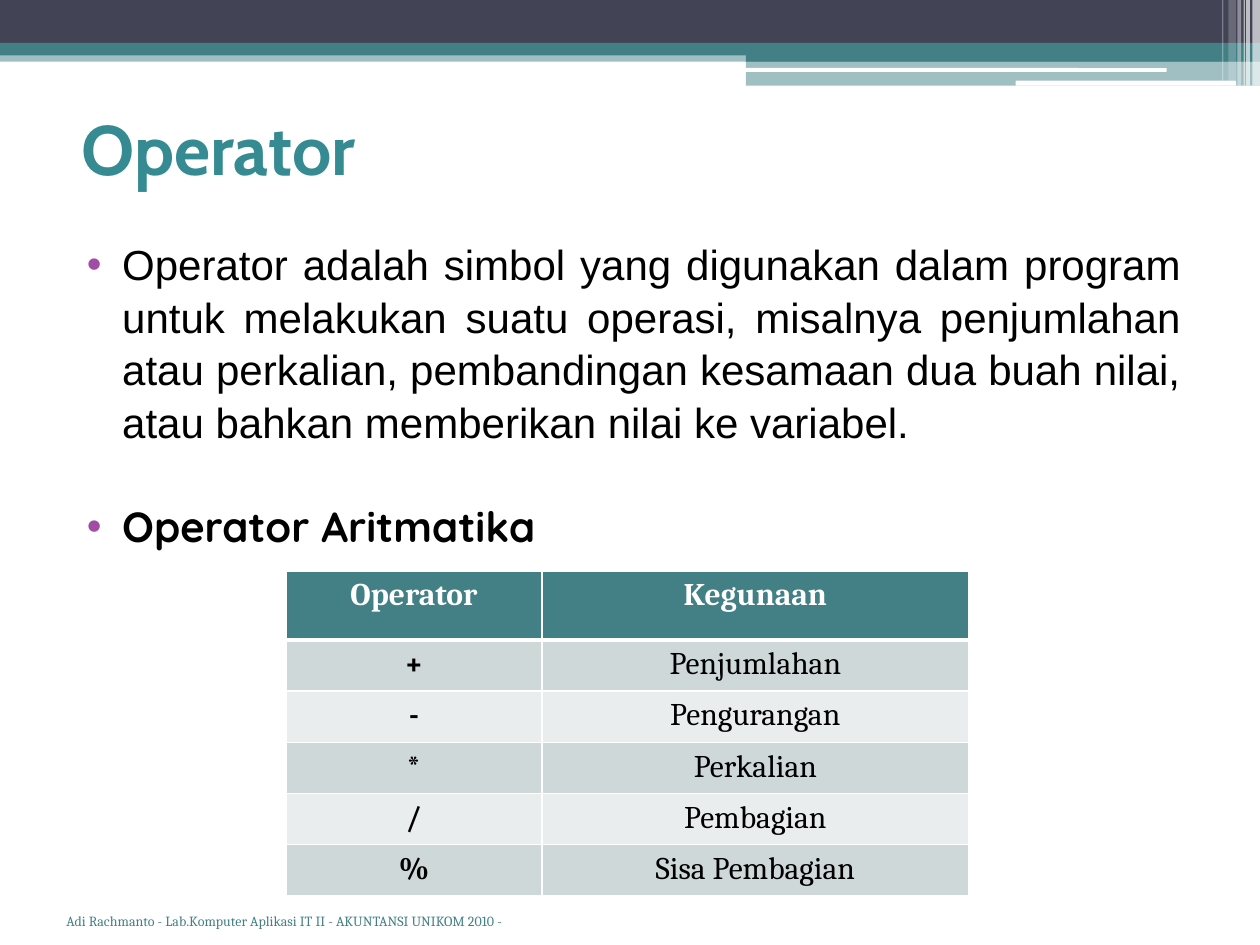
from typing import NamedTuple, Optional

from lxml.etree import SubElement
from pptx import Presentation
from pptx.dml.color import RGBColor
from pptx.enum.shapes import MSO_SHAPE as Preset
from pptx.enum.text import MSO_ANCHOR as Anchor, MSO_AUTO_SIZE as AutoSize, PP_ALIGN as Align
from pptx.oxml.ns import qn
from pptx.util import Inches, Pt

TEAL = RGBColor(0x43, 0x80, 0x86)
TITLE_TEAL = RGBColor(0x36, 0x8B, 0x93)
SLATE = RGBColor(0x42, 0x44, 0x56)
PURPLE = RGBColor(0xA0, 0x4D, 0xA3)
DARK_BAND = RGBColor(0xCF, 0xD8, 0xD9)
LIGHT_BAND = RGBColor(0xE9, 0xED, 0xED)
WHITE = RGBColor(0xFF, 0xFF, 0xFF)
BLACK = RGBColor(0, 0, 0)


class Bar(NamedTuple):
    left: float
    top: float
    width: float
    height: float
    color: RGBColor
    opacity: int = 100
    preset: Preset = Preset.RECTANGLE


class Bullet(NamedTuple):
    text: str
    font: str
    bold: bool
    space_before: Optional[float]


BARS = [
    Bar(0, 0.4, 10, 0.09, TEAL, 50),
    Bar(0, 0, 10, 0.34, SLATE),
    Bar(0, 0.34, 10, 0.1, TEAL),
    Bar(5.92, 0.39, 4.08, 0.1, TEAL),
    Bar(5.92, 0.48, 4.08, 0.2, TEAL, 50),
    Bar(5.91, 0.54, 3.35, 0.03, WHITE, preset=Preset.ROUNDED_RECTANGLE),
    Bar(8.06, 0.64, 1.75, 0.04, WHITE, preset=Preset.ROUNDED_RECTANGLE),
    Bar(9.94, 0, 0.06, 0.68, WHITE, 65),
    Bar(9.89, 0, 0.03, 0.68, WHITE, 65),
    Bar(9.87, 0, 0.01, 0.68, WHITE, 60),
    Bar(9.82, 0, 0.03, 0.68, WHITE, 40),
    Bar(9.75, 0, 0.06, 0.64, WHITE, 20),
    Bar(9.7, 0, 0.01, 0.64, WHITE, 30),
]

BULLETS = [
    Bullet(
        "Operator adalah simbol yang digunakan dalam program untuk melakukan suatu "
        "operasi, misalnya penjumlahan atau perkalian, pembandingan kesamaan dua buah "
        "nilai, atau bahkan memberikan nilai ke variabel.",
        "Arial", False, None,
    ),
    Bullet("Operator Aritmatika", "Quicksand", True, 30),
]

TABLE_ROWS = [
    ("Operator", "Kegunaan"),
    ("+", "Penjumlahan"),
    ("-", "Pengurangan"),
    ("*", "Perkalian"),
    ("/", "Pembagian"),
    ("%", "Sisa Pembagian"),
]
COLUMN_WIDTHS = (2.03, 3.39)
TABLE_HEIGHT = 2.58
HEADER_HEIGHT = 0.55


def place(shape, left: float, top: float, width: float, height: float) -> None:
    shape.left, shape.top = Inches(left), Inches(top)
    shape.width, shape.height = Inches(width), Inches(height)


def format_runs(paragraph, font: str, size: float, color: RGBColor, bold: bool = False) -> None:
    for run in paragraph.runs:
        run.font.name = font
        run.font.size = Pt(size)
        run.font.bold = bold
        run.font.color.rgb = color


def add_bar(slide, bar: Bar) -> None:
    shape = slide.shapes.add_shape(
        bar.preset, Inches(bar.left), Inches(bar.top), Inches(bar.width), Inches(bar.height)
    )
    shape.shadow.inherit = False
    shape.line.fill.background()
    shape.fill.solid()
    shape.fill.fore_color.rgb = bar.color
    if bar.opacity < 100:
        color = shape.fill._xPr.find(qn("a:solidFill"))[0]
        SubElement(color, qn("a:alpha"), val=str(bar.opacity * 1000))


def add_title(slide) -> None:
    title = slide.shapes.title
    place(title, 0.55, 0.78, 9, 0.78)
    frame = title.text_frame
    frame.text = "Operator"
    frame.auto_size = AutoSize.NONE
    frame.vertical_anchor = Anchor.MIDDLE
    frame.paragraphs[0].alignment = Align.LEFT
    format_runs(frame.paragraphs[0], "Cabin", 40, TITLE_TEAL, True)


def add_bullets(slide) -> None:
    body = slide.placeholders[1]
    place(body, 0.47, 1.83, 9, 5.28)
    frame = body.text_frame
    frame.text = "\n".join(bullet.text for bullet in BULLETS)
    frame.auto_size = AutoSize.NONE
    for paragraph, bullet in zip(frame.paragraphs, BULLETS):
        paragraph.alignment = Align.JUSTIFY
        paragraph.line_spacing = 1.04
        paragraph.space_before = Pt(bullet.space_before or 0)
        properties = paragraph._p.get_or_add_pPr()
        properties.set("marL", str(Inches(0.4)))
        properties.set("indent", str(Inches(-0.28)))
        bullet_color = SubElement(properties, qn("a:buClr"))
        SubElement(bullet_color, qn("a:srgbClr"), val=str(PURPLE))
        SubElement(properties, qn("a:buFont"), typeface="Arial")
        SubElement(properties, qn("a:buChar"), char="•")
        format_runs(paragraph, bullet.font, 24, BLACK, bullet.bold)


def add_borders(cell, bottom_width: float) -> None:
    properties = cell._tc.get_or_add_tcPr()
    for side, width in (("L", 1), ("R", 1), ("T", 1), ("B", bottom_width)):
        line = SubElement(properties, qn(f"a:ln{side}"), w=str(Pt(width)))
        fill = SubElement(line, qn("a:solidFill"))
        SubElement(fill, qn("a:srgbClr"), val=str(WHITE))


def add_operator_table(slide) -> None:
    table = slide.shapes.add_table(
        len(TABLE_ROWS), len(COLUMN_WIDTHS), Inches(2.27), Inches(4.53),
        Inches(sum(COLUMN_WIDTHS)), Inches(TABLE_HEIGHT),
    ).table
    for column, width in zip(table.columns, COLUMN_WIDTHS):
        column.width = Inches(width)
    row_height = (TABLE_HEIGHT - HEADER_HEIGHT) / (len(TABLE_ROWS) - 1)
    for row_index, texts in enumerate(TABLE_ROWS):
        header = row_index == 0
        table.rows[row_index].height = Inches(HEADER_HEIGHT if header else row_height)
        band = TEAL if header else DARK_BAND if row_index % 2 else LIGHT_BAND
        for column_index, text in enumerate(texts):
            cell = table.cell(row_index, column_index)
            cell.text_frame.text = text
            paragraph = cell.text_frame.paragraphs[0]
            paragraph.alignment = Align.CENTER
            format_runs(paragraph, "Cambria", 18, WHITE if header else BLACK,
                        header or column_index == 0)
            add_borders(cell, 3 if header or row_index == 0 else 1)
            if row_index == 1:
                cell._tc.tcPr.find(qn("a:lnT")).set("w", str(Pt(3)))
            cell.fill.solid()
            cell.fill.fore_color.rgb = band


def add_footer(slide) -> None:
    footer = slide.shapes.add_textbox(Inches(-0.05), Inches(7.19), Inches(4.14), Inches(0.39))
    frame = footer.text_frame
    frame.word_wrap = True
    frame.text = "Adi Rachmanto - Lab.Komputer Aplikasi IT II - AKUNTANSI UNIKOM 2010 -"
    frame.paragraphs[0].alignment = Align.RIGHT
    format_runs(frame.paragraphs[0], "Cambria", 8, TEAL)


def main() -> None:
    presentation = Presentation()
    presentation.slide_width, presentation.slide_height = Inches(10), Inches(7.5)
    slide = presentation.slides.add_slide(presentation.slide_layouts[1])
    for bar in BARS:
        add_bar(slide, bar)
    add_title(slide)
    add_bullets(slide)
    add_operator_table(slide)
    add_footer(slide)
    presentation.save("out.pptx")


if __name__ == "__main__":
    main()
